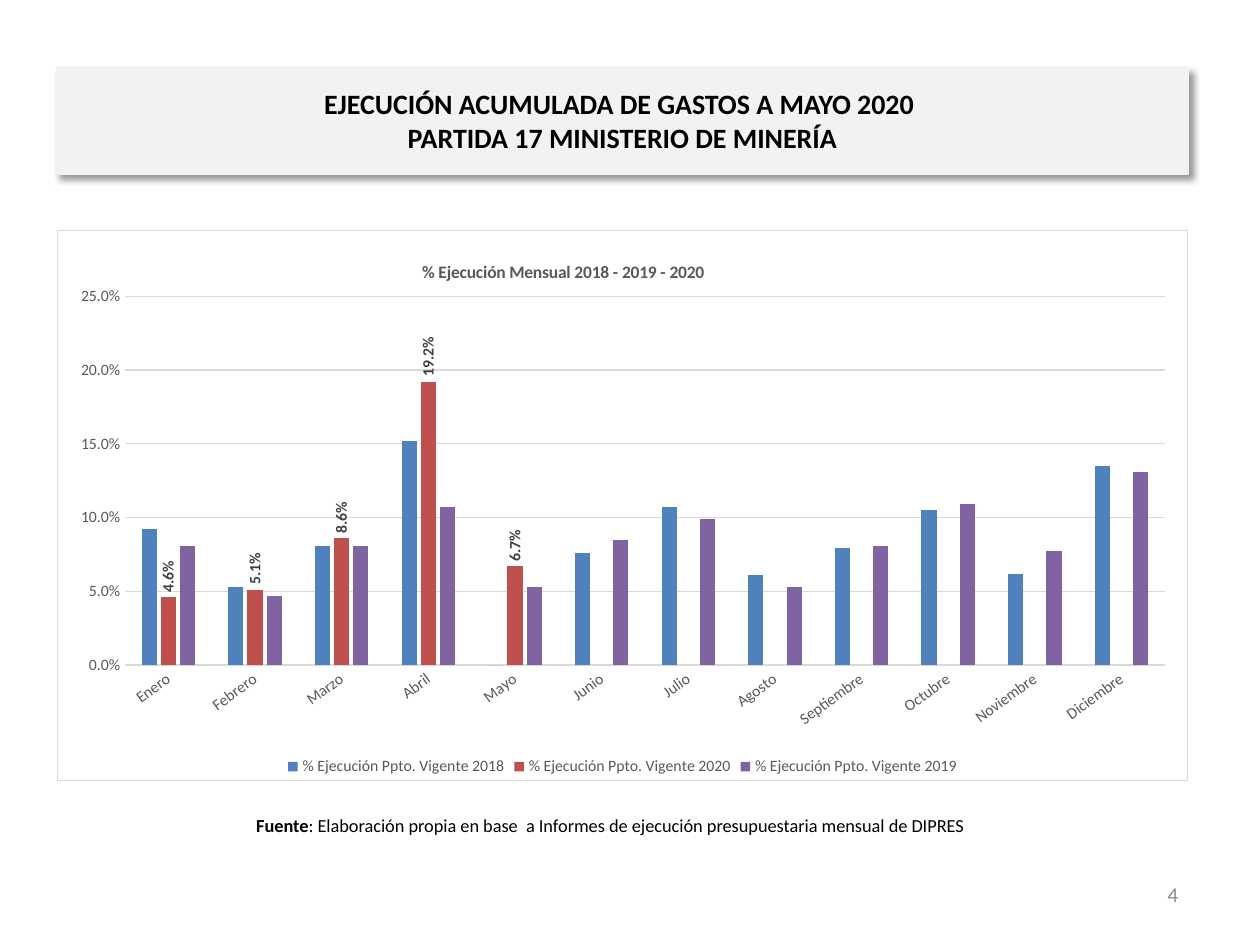
from lxml.etree import SubElement
from pptx import Presentation
from pptx.chart.data import CategoryChartData
from pptx.dml.color import RGBColor
from pptx.enum.chart import XL_CHART_TYPE as ChartType
from pptx.enum.chart import XL_LABEL_POSITION as LabelPosition
from pptx.enum.chart import XL_LEGEND_POSITION as LegendPosition
from pptx.enum.chart import XL_TICK_MARK as TickMark
from pptx.enum.text import MSO_ANCHOR as Anchor
from pptx.enum.text import MSO_AUTO_SIZE as AutoSize
from pptx.enum.text import PP_ALIGN as Align
from pptx.oxml import parse_xml
from pptx.oxml.ns import nsdecls, qn
from pptx.util import Inches, Pt

FONT = "Calibri"
COLORS = {
    "text": "000000", "page": "8C8C8C", "axis": "595959", "label": "404040",
    "banner": "F2F2F2", "rule": "D9D9D9", "paper": "FFFFFF",
    "2018": "4F81BD", "2020": "C0504D", "2019": "8064A2",
}
MONTHS = ["Enero", "Febrero", "Marzo", "Abril", "Mayo", "Junio", "Julio",
          "Agosto", "Septiembre", "Octubre", "Noviembre", "Diciembre"]
EXECUTION = {
    "2018": [0.092, 0.053, 0.081, 0.152, 0, 0.076,
             0.107, 0.061, 0.079, 0.105, 0.062, 0.135],
    "2020": [0.046, 0.051, 0.086, 0.192, 0.067] + [None] * 7,
    "2019": [0.081, 0.047, 0.081, 0.107, 0.053, 0.085,
             0.099, 0.053, 0.081, 0.109, 0.077, 0.131],
}


def rgb(name):
    return RGBColor.from_string(COLORS[name])


def style_font(font, size, color="text", bold=False):
    font.name, font.size, font.bold = FONT, Pt(size), bold
    font.color.rgb = rgb(color)


def write(frame, lines, align=Align.CENTER, **font_style):
    """Fill one paragraph; each line is a list of (text, bold) runs."""
    paragraph = frame.paragraphs[0]
    paragraph.alignment = align
    for number, line in enumerate(lines):
        if number:
            paragraph.add_line_break()
        for text, bold in line:
            run = paragraph.add_run()
            run.text = text
            style_font(run.font, bold=bold, **font_style)


def place_in_chart(parent, **shares):
    """Give a chart part a manual layout in shares of the chart's size."""
    for old in parent.findall(qn("c:layout")):
        parent.remove(old)
    layout = parse_xml(f"<c:layout {nsdecls('c')}><c:manualLayout/></c:layout>")
    if "w" in shares:
        SubElement(layout[0], qn("c:layoutTarget"), val="inner")
    for axis in "xy":
        SubElement(layout[0], qn(f"c:{axis}Mode"), val="edge")
    for key, share in shares.items():
        SubElement(layout[0], qn(f"c:{key}"), val=str(share))
    parent.insert(0 if parent.find(qn("c:tx")) is None else 1, layout)


def rotate_text(chart, part_tag, degrees):
    """Turn the text of the first chart part with this tag."""
    part = chart.element.find(f".//{qn(part_tag)}")
    body = part.find(qn("c:txPr")).find(qn("a:bodyPr"))
    body.set("rot", str(degrees * 60000))
    body.set("vert", "horz")


class ReportSlide:
    def __init__(self):
        self.deck = Presentation()
        self.deck.slide_width, self.deck.slide_height = Inches(10), Inches(7.5)
        title_only = self.deck.slide_layouts[5]
        self.slide = self.deck.slides.add_slide(title_only)

    def box(self, left, top, width, height):
        """Turn shares of the slide into lengths."""
        across, down = self.deck.slide_width, self.deck.slide_height
        return (int(left * across), int(top * down),
                int(width * across), int(height * down))

    def banner(self, area, lines):
        title = self.slide.shapes.title
        title.left, title.top, title.width, title.height = self.box(*area)
        title.fill.solid()
        title.fill.fore_color.rgb = rgb("banner")
        title.line.color.rgb = rgb("banner")
        title.line.width = Pt(0.75)
        title.element.spPr.append(parse_xml(
            f'<a:effectLst {nsdecls("a")}>'
            f'<a:outerShdw blurRad="{Pt(4)}" dist="{Pt(3)}" dir="2700000" '
            'algn="tl" rotWithShape="0"><a:srgbClr val="000000">'
            '<a:alpha val="40000"/></a:srgbClr></a:outerShdw></a:effectLst>'))
        frame = title.text_frame
        frame.auto_size = AutoSize.NONE
        frame.vertical_anchor = Anchor.MIDDLE
        write(frame, lines, size=16)

    def text(self, area, lines, **style):
        frame = self.slide.shapes.add_textbox(*self.box(*area)).text_frame
        frame.word_wrap = True
        frame.vertical_anchor = Anchor.MIDDLE
        write(frame, lines, **style)

    def monthly_chart(self, area, heading, months, execution, labelled):
        data = CategoryChartData(number_format="0.0%")
        data.categories = months
        for year, shares in execution.items():
            data.add_series(f"% Ejecución Ppto. Vigente {year}", shares)
        chart = self.slide.shapes.add_chart(
            ChartType.COLUMN_CLUSTERED, *self.box(*area), data).chart
        style_font(chart.font, 10)
        write(chart.chart_title.text_frame, [[(heading, True)]],
              size=10, color="axis")
        place_in_chart(chart.chart_title.element, x=0.32, y=0.05)
        self.frame_chart(chart)
        self.style_axes(chart)
        chart.has_legend = True
        chart.legend.position = LegendPosition.BOTTOM
        chart.legend.include_in_layout = False
        style_font(chart.legend.font, 9, "axis")

        plot = chart.plots[0]
        plot.gap_width, plot.overlap = 219, -27
        plot.vary_by_categories = False
        for year, series in zip(execution, plot.series):
            series.format.fill.solid()
            series.format.fill.fore_color.rgb = rgb(year)
            series.invert_if_negative = False
            if year == labelled:
                labels = series.data_labels
                labels.show_value = True
                labels.position = LabelPosition.OUTSIDE_END
                labels.number_format = "0.0%"
                labels.number_format_is_linked = False
                style_font(labels.font, 9, "label", bold=True)
                rotate_text(chart, "c:dLbls", -90)

    @staticmethod
    def frame_chart(chart):
        space = chart.element
        place_in_chart(space.find(f".//{qn('c:plotArea')}"),
                       x=0.06, y=0.12, w=0.92, h=0.67)
        space.find(qn("c:txPr")).addprevious(parse_xml(
            f'<c:spPr {nsdecls("c", "a")}><a:solidFill>'
            f'<a:srgbClr val="{COLORS["paper"]}"/></a:solidFill>'
            f'<a:ln w="{Pt(0.75)}"><a:solidFill>'
            f'<a:srgbClr val="{COLORS["rule"]}"/></a:solidFill></a:ln></c:spPr>'))

    @staticmethod
    def style_axes(chart):
        month_axis, share_axis = chart.category_axis, chart.value_axis
        for axis in (month_axis, share_axis):
            axis.major_tick_mark = axis.minor_tick_mark = TickMark.NONE
            style_font(axis.tick_labels.font, 9, "axis")
        rotate_text(chart, "c:catAx", -36)
        share_axis.minimum_scale, share_axis.maximum_scale = 0, 0.25
        share_axis.major_unit = 0.05
        share_axis.tick_labels.number_format = "0.0%"
        share_axis.tick_labels.number_format_is_linked = False
        share_axis.format.line.fill.background()
        for rule in (month_axis.format.line,
                     share_axis.major_gridlines.format.line):
            rule.color.rgb = rgb("rule")
            rule.width = Pt(0.75)


def main():
    report = ReportSlide()
    report.banner((0.045, 0.071, 0.898, 0.113), [
        [("EJECUCIÓN ACUMULADA DE GASTOS A MAYO 2020 ", True)],
        [("PARTIDA 17 MINISTERIO DE MINERÍA", True)]])
    report.monthly_chart((0.045, 0.243, 0.898, 0.584),
                         "% Ejecución Mensual 2018 - 2019 - 2020",
                         MONTHS, EXECUTION, labelled="2020")
    report.text((0.083, 0.847, 0.803, 0.053), [[
        ("Fuente", True),
        (": Elaboración propia en base  a Informes de ejecución "
         "presupuestaria mensual de DIPRES", False)]], size=10.5)
    report.text((0.712, 0.92, 0.233, 0.053), [[("4", False)]],
                align=Align.RIGHT, size=12, color="page")
    report.deck.save("out.pptx")


if __name__ == "__main__":
    main()
